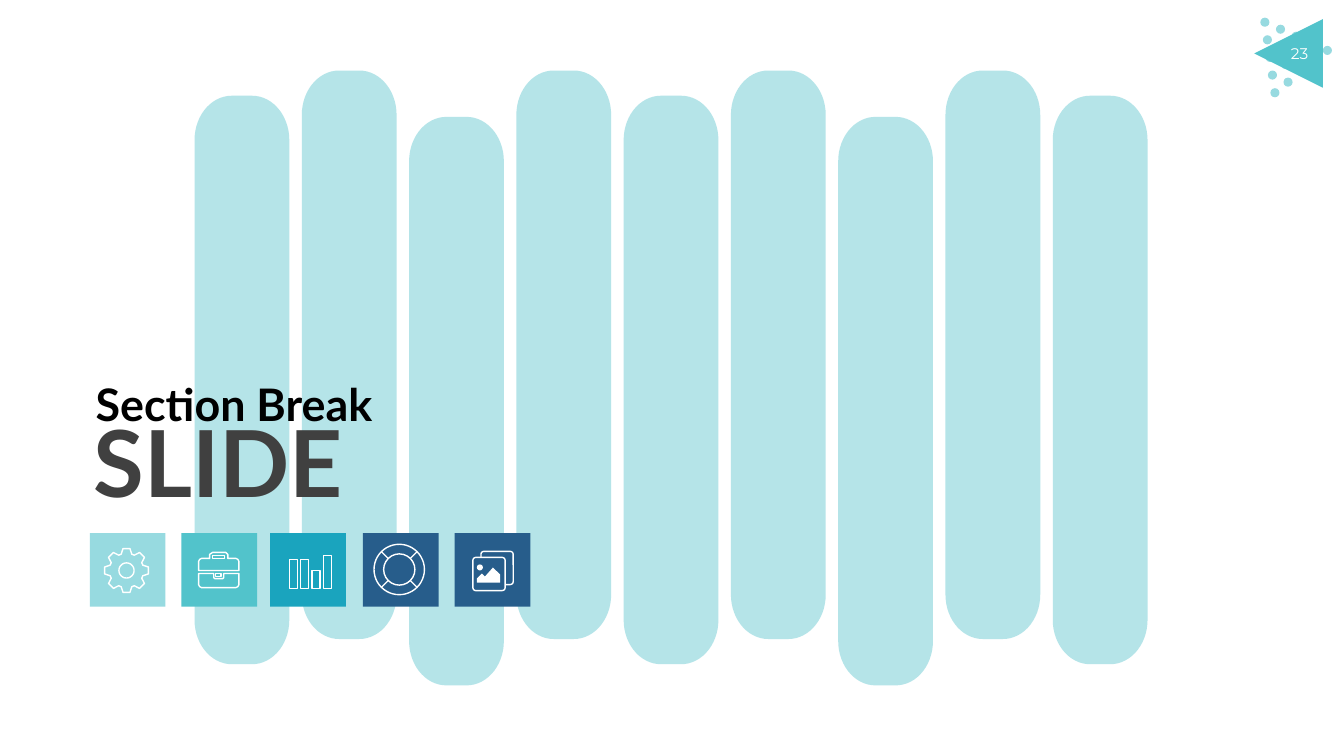
"""Build a section break slide with tall rounded bars and a row of icon tiles."""
import math
from dataclasses import dataclass

from lxml import etree
from pptx import Presentation
from pptx import slide as s
from pptx import util as u
from pptx.dml import color as dml
from pptx.enum import shapes, text
from pptx.oxml import ns
from pptx.shapes import autoshape

COLORS = {
    "pale": "97DAE0",
    "aqua": "52C3CB",
    "teal": "1AA4BE",
    "navy": "275D8B",
    "white": "FFFFFF",
    "black": "000000",
    "gray": "404040",
}
Point = tuple[float, float]
Contour = list[Point]
KIND = shapes.MSO_SHAPE


@dataclass
class Label:
    wording: str
    left: float
    top: float
    width: float
    height: float
    size: float
    font: str
    color: str
    bold: bool = False
    align: text.PP_ALIGN = text.PP_ALIGN.LEFT


@dataclass
class Tile:
    left: float
    color: str


LABELS = [
    Label("Section Break", 0.85, 3.69, 3.71, 0.64, 32, "Lato", "black", True),
    Label("SLIDE", 0.83, 3.97, 4.14, 1.21, 66, "Lato", "gray", True),
]
PAGE_NUMBER = Label("23", 12.59, 0.39, 0.6, 0.29, 11, "Montserrat", "white",
                    align=text.PP_ALIGN.CENTER)
TILES = [Tile(0.89, "pale"), Tile(1.8, "aqua"), Tile(2.68, "teal"),
         Tile(3.6, "navy"), Tile(4.51, "navy")]
BAR_TOPS = [0.95, 0.7, 1.16, 0.7, 0.95, 0.7, 1.16, 0.7, 0.95]

CASE_BASE = [(1.97, 5.69), (2.12, 5.69), (2.12, 5.73), (2.13, 5.74), (2.21, 5.74),
             (2.22, 5.73), (2.22, 5.69), (2.37, 5.69), (2.37, 5.8), (2.36, 5.82),
             (2.34, 5.83), (2, 5.83), (1.98, 5.82), (1.97, 5.8)]
CASE_CLASP = [(2.14, 5.69), (2.19, 5.69), (2.19, 5.72), (2.14, 5.72)]
CASE_LID = [(1.97, 5.66), (2.37, 5.66), (2.37, 5.57), (2.36, 5.55), (2.34, 5.54),
            (2.26, 5.54), (2.26, 5.5), (2.24, 5.48), (2.11, 5.48), (2.08, 5.5),
            (2.08, 5.54), (2, 5.54), (1.98, 5.55), (1.97, 5.57)]
CASE_HANDLE = [(2.11, 5.51), (2.23, 5.51), (2.23, 5.54), (2.11, 5.54)]
MOUNTAINS = [(4.96, 5.7), (4.89, 5.63), (4.81, 5.72), (4.78, 5.69), (4.73, 5.74),
             (4.73, 5.78), (4.96, 5.78)]


def rgb(name: str) -> dml.RGBColor:
    return dml.RGBColor.from_string(COLORS[name])


def polar(center: Point, radius: float, degrees: float) -> Point:
    angle = math.radians(degrees)
    return center[0] + radius * math.cos(angle), center[1] + radius * math.sin(angle)


def paint(shape: autoshape.Shape, fill: str | None, line: str | None) -> None:
    shape.shadow.inherit = False
    if fill:
        shape.fill.solid()
        shape.fill.fore_color.rgb = rgb(fill)
    else:
        shape.fill.background()
    if line:
        shape.line.color.rgb = rgb(line)
        shape.line.width = u.Pt(1)
    else:
        shape.line.fill.background()


def add_preset(page: s.Slide, kind: shapes.MSO_SHAPE, left: float, top: float,
               width: float, height: float, fill: str | None = None,
               line: str | None = None) -> autoshape.Shape:
    shape = page.shapes.add_shape(kind, u.Inches(left), u.Inches(top),
                                  u.Inches(width), u.Inches(height))
    paint(shape, fill, line)
    return shape


def add_outline(page: s.Slide, contours: list[Contour], fill: str | None = None,
                line: str | None = None) -> autoshape.Shape:
    scaled = [[(u.Inches(x), u.Inches(y)) for x, y in contour] for contour in contours]
    builder = page.shapes.build_freeform(*scaled[0][0])
    for index, points in enumerate(scaled):
        if index:
            builder.move_to(*points[0])
        builder.add_line_segments(points[1:], close=True)
    shape = builder.convert_to_shape()
    paint(shape, fill, line)
    return shape


def add_label(page: s.Slide, label: Label) -> None:
    box = page.shapes.add_textbox(u.Inches(label.left), u.Inches(label.top),
                                  u.Inches(label.width), u.Inches(label.height))
    box.text_frame.word_wrap = True
    box.text_frame.auto_size = text.MSO_AUTO_SIZE.SHAPE_TO_FIT_TEXT
    para = box.text_frame.paragraphs[0]
    para.text = label.wording
    para.alignment = label.align
    for span in para.runs:
        span.font.size = u.Pt(label.size)
        span.font.name = label.font
        span.font.bold = label.bold
        span.font.color.rgb = rgb(label.color)


def bar_contour(left: float, top: float) -> Contour:
    width, height, radius_x, radius_y = 0.94, 5.64, 0.37, 0.44
    near_x, far_x = left + radius_x, left + width - radius_x
    near_y, far_y = top + radius_y, top + height - radius_y
    corners = [(far_x, far_y), (near_x, far_y), (near_x, near_y), (far_x, near_y)]
    points = []
    for quarter, (x, y) in enumerate(corners):
        for step in range(16):
            across, down = polar((0, 0), 1, 90 * quarter + 6 * step)
            points.append((x + radius_x * across, y + radius_y * down))
    return points


def draw_bars(page: s.Slide) -> None:
    bars = add_outline(page, [bar_contour(1.93 + 1.064 * column, top)
                              for column, top in enumerate(BAR_TOPS)], "pale")
    shade = bars.element.find(".//" + ns.qn("a:srgbClr"))
    etree.SubElement(shade, ns.qn("a:alpha"), val="71000")


def draw_page_marker(page: s.Slide) -> None:
    for column in range(5):
        for row in range(5 - column):
            add_preset(page, KIND.OVAL, 12.5 + 0.155 * column + 0.025 * row,
                       0.175 + 0.07 * column + 0.175 * row, 0.09, 0.09, "pale")
    pointer = add_preset(page, KIND.ISOSCELES_TRIANGLE, 12.44, 0.19, 0.68, 0.68, "aqua")
    pointer.rotation = 270
    add_label(page, PAGE_NUMBER)


def draw_gear(page: s.Slide) -> None:
    center = (1.255, 5.66)
    teeth = [polar(center, radius, 45 * tooth + offset) for tooth in range(8)
             for radius, offset in ((0.17, -18), (0.22, -9), (0.22, 9), (0.17, 18))]
    hole = [polar(center, 0.075, 10 * step) for step in range(36)]
    add_outline(page, [teeth, hole], line="white")


def draw_briefcase(page: s.Slide) -> None:
    for contours in ([CASE_BASE], [CASE_CLASP], [CASE_LID, CASE_HANDLE]):
        add_outline(page, contours, line="white")


def draw_columns(page: s.Slide) -> None:
    for index, height in enumerate((0.29, 0.29, 0.18, 0.33)):
        add_preset(page, KIND.RECTANGLE, 2.87 + 0.113 * index, 5.84 - height,
                   0.08, height, line="white")


def draw_photos(page: s.Slide) -> None:
    for left, top in ((4.77, 5.47), (4.69, 5.53)):
        frame = add_preset(page, KIND.ROUNDED_RECTANGLE, left, top, 0.32, 0.33,
                           "navy", "white")
        frame.adjustments[0] = 0.09
    add_outline(page, [MOUNTAINS], "white")
    add_preset(page, KIND.OVAL, 4.73, 5.6, 0.06, 0.06, "white")


def draw_lifebuoy(page: s.Slide) -> None:
    center = (3.96, 5.65)
    for radius in (0.25, 0.155):
        add_preset(page, KIND.OVAL, center[0] - radius, center[1] - radius,
                   2 * radius, 2 * radius, line="white")
    for degrees in range(45, 360, 90):
        ends = [u.Inches(value) for radius in (0.25, 0.15)
                for value in polar(center, radius, degrees)]
        spoke = page.shapes.add_connector(shapes.MSO_CONNECTOR.STRAIGHT, *ends)
        spoke.line.color.rgb = rgb("white")
        spoke.line.width = u.Pt(1)
        etree.SubElement(spoke.element.spPr, ns.qn("a:effectLst"))


def main() -> None:
    deck = Presentation()
    deck.slide_width, deck.slide_height = u.Inches(13.33), u.Inches(7.5)
    page = deck.slides.add_slide(deck.slide_layouts[6])
    draw_bars(page)
    for label in LABELS:
        add_label(page, label)
    draw_page_marker(page)
    for tile in TILES:
        add_preset(page, KIND.RECTANGLE, tile.left, 5.29, 0.75, 0.73, tile.color)
    for draw_icon in (draw_gear, draw_briefcase, draw_columns, draw_photos, draw_lifebuoy):
        draw_icon(page)
    deck.save("out.pptx")


if __name__ == "__main__":
    main()
